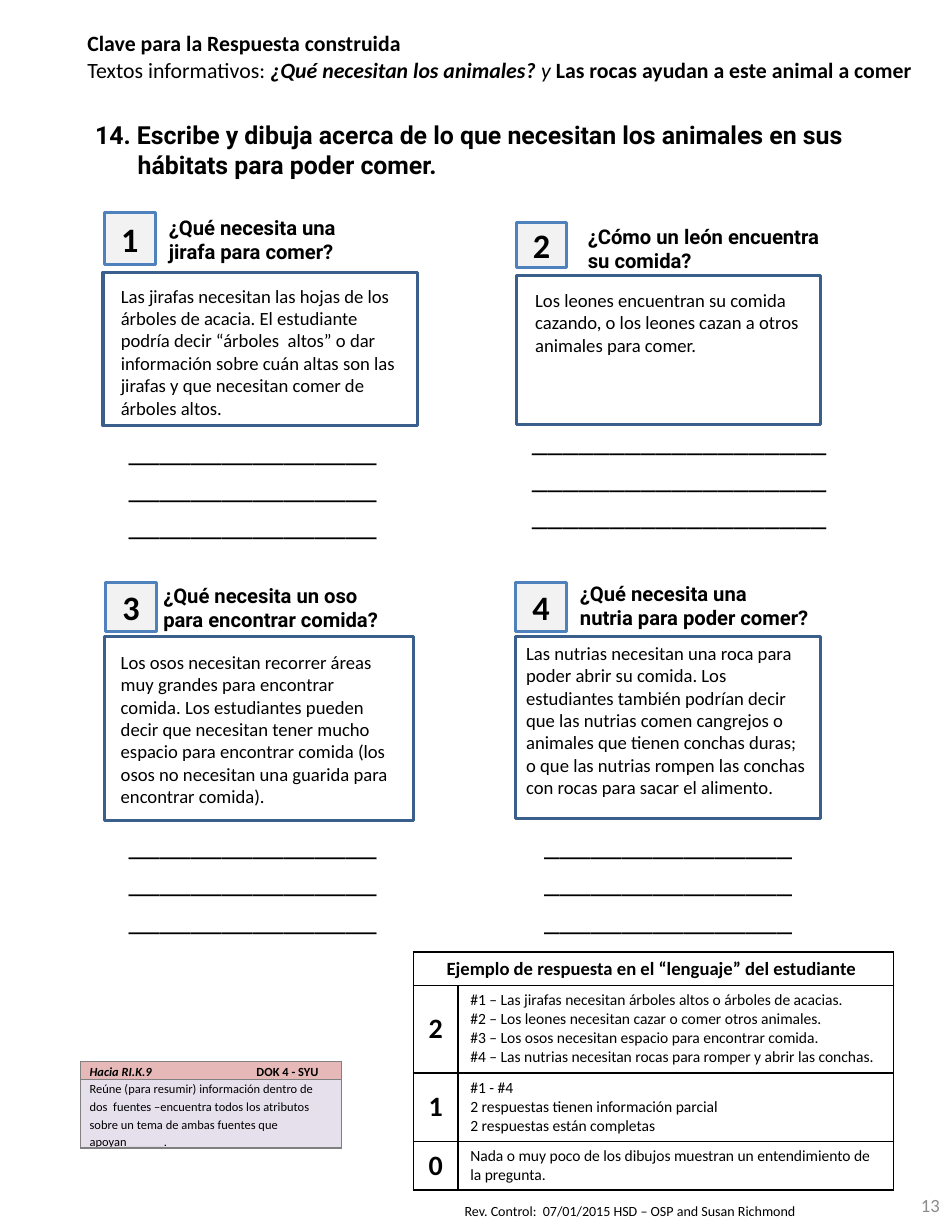
from lxml import etree
from pptx import Presentation
from pptx.dml.color import RGBColor
from pptx.enum import shapes, text
from pptx.oxml.ns import qn
from pptx.util import Inches, Pt

BLACK = RGBColor(0x00, 0x00, 0x00)
WHITE = RGBColor(0xFF, 0xFF, 0xFF)
GRAY = RGBColor(0x80, 0x80, 0x80)
PAGE_GRAY = RGBColor(0x8C, 0x8C, 0x8C)
BADGE_FILL = RGBColor(0xF2, 0xF2, 0xF2)
BADGE_LINE = RGBColor(0x4F, 0x81, 0xBD)
FRAME_LINE = RGBColor(0x3A, 0x5F, 0x8C)
PINK = RGBColor(0xE6, 0xB9, 0xB8)
LILAC = RGBColor(0xE6, 0xE0, 0xEC)

WIDE_MARGINS = (0.11, 0.05, 0.11, 0.05)
MIDDLE = text.MSO_ANCHOR.MIDDLE
CENTER = text.PP_ALIGN.CENTER

# Each card: origin, then parts as (left, top, width, height) from that origin.
CARDS = [
    dict(origin=(0.93, 1.9), number="1", badge=(0, 0, 0.46, 0.46),
         frame=(-0.01, 0.53, 2.81, 1.37),
         heading=(0.48, -0.03, 1.94, 0.54), question=["¿Qué necesita una jirafa para comer?"],
         answer=(0.05, 0.59, 2.75, 1.31),
         sample="Las jirafas necesitan las hojas de los árboles de acacia. El estudiante podría "
                "decir “árboles  altos” o dar información sobre cuán altas son las jirafas y que "
                "necesitan comer de árboles altos.",
         blanks=(0.12, 1.89, 2.5, 1.11), blank_count=48),
    dict(origin=(4.61, 1.99), number="2", badge=(0, 0, 0.45, 0.4),
         frame=(0, 0.47, 2.72, 1.33),
         heading=(0.54, -0.04, 2.41, 0.54), question=["¿Cómo un león encuentra su comida?"],
         answer=(0.07, 0.54, 2.65, 0.71),
         sample="Los leones encuentran su comida cazando, o los leones cazan a otros animales "
                "para comer.",
         blanks=(0.04, 1.71, 2.89, 1.11), blank_count=57),
    dict(origin=(0.93, 5.2), number="3", badge=(0.01, 0, 0.46, 0.44),
         frame=(0, 0.48, 2.76, 1.65),
         heading=(0.43, -0.04, 2.33, 0.54),
         question=["¿Qué necesita un oso para encontrar comida?"],
         answer=(0.05, 0.56, 2.6, 1.51),
         sample="Los osos necesitan recorrer áreas muy grandes para encontrar comida. Los "
                "estudiantes pueden decir que necesitan tener mucho espacio para encontrar "
                "comida (los osos no necesitan una guarida para encontrar comida).",
         blanks=(0.12, 2.11, 2.5, 1.11), blank_count=48),
    dict(origin=(4.6, 5.2), number="4", badge=(0, 0, 0.46, 0.44),
         frame=(0, 0.48, 2.73, 1.63),
         heading=(0.48, -0.06, 2.58, 0.54),
         question=["¿Qué necesita una", "nutria para poder comer?"],
         answer=None,
         sample="Las nutrias necesitan una roca para poder abrir su comida. Los estudiantes "
                "también podrían decir que las nutrias comen cangrejos o animales que tienen "
                "conchas duras; o que las nutrias rompen las conchas con rocas para sacar el "
                "alimento.",
         blanks=(0.16, 2.11, 2.5, 1.11), blank_count=48),
]

RUBRIC = [
    ("2", ["#1 – Las jirafas necesitan árboles altos o árboles de acacias.",
           "#2 – Los leones necesitan cazar o comer otros animales.",
           "#3 – Los osos necesitan espacio para encontrar comida.",
           "#4 – Las nutrias necesitan rocas para romper y abrir las conchas."]),
    ("1", ["#1 - #4", "2 respuestas tienen información parcial",
           "2 respuestas están completas"]),
    ("0", ["Nada o muy poco de los dibujos muestran un entendimiento de la pregunta."]),
]


def set_margins(target, margins):
    for side, value in zip(("left", "top", "right", "bottom"), margins):
        setattr(target, f"margin_{side}", Inches(value))


def write(frame, lines, size, color=BLACK, font="Calibri", align=None, spacing=None, **style):
    """Fill a text frame; a line is a string or a list of (string, font values) runs."""
    for index, line in enumerate(lines):
        paragraph = frame.paragraphs[0] if index == 0 else frame.add_paragraph()
        paragraph.alignment = align
        paragraph.line_spacing = spacing
        for words, extra in [(line, {})] if isinstance(line, str) else line:
            run = paragraph.add_run()
            run.text = words
            run.font.color.rgb = color
            values = {"name": font, "size": Pt(size), **style, **extra}
            for name, value in values.items():
                setattr(run.font, name, value)


def add_text(slide, box, lines, size, margins=(0.1, 0.05, 0.1, 0.05), wrap=True,
             anchor=text.MSO_ANCHOR.TOP, **style):
    frame = slide.shapes.add_textbox(*map(Inches, box)).text_frame
    frame.word_wrap = wrap
    frame.vertical_anchor = anchor
    set_margins(frame, margins)
    write(frame, lines, size, **style)
    return frame


def add_box(slide, box, fill, line):
    shape = slide.shapes.add_shape(shapes.MSO_SHAPE.RECTANGLE, *map(Inches, box))
    shape.shadow.inherit = False
    shape.fill.solid()
    shape.fill.fore_color.rgb = fill
    shape.line.color.rgb = line
    shape.line.width = Pt(2)
    return shape.text_frame


def add_card(slide, card):
    left, top = card["origin"]

    def place(part):
        x, y, width, height = card[part]
        return left + x, top + y, width, height

    badge = add_box(slide, place("badge"), BADGE_FILL, BADGE_LINE)
    badge.vertical_anchor = MIDDLE
    set_margins(badge, WIDE_MARGINS)
    write(badge, [card["number"]], 22, align=CENTER, bold=True)
    frame = add_box(slide, place("frame"), WHITE, FRAME_LINE)
    if card["answer"]:
        add_text(slide, place("answer"), [card["sample"]], 12)
    else:
        frame.vertical_anchor = text.MSO_ANCHOR.TOP
        write(frame, [card["sample"]], 12, align=text.PP_ALIGN.LEFT)
    add_text(slide, place("heading"), card["question"], 13, font="Roboto", bold=True)
    add_text(slide, place("blanks"), ["_" * card["blank_count"]], 20)


def add_grid(slide, box, widths, heights, border):
    """Add an unstyled table whose cells all have a thin border."""
    table = slide.shapes.add_table(len(heights), len(widths), *map(Inches, box)).table
    table.first_row = table.horz_banding = False
    for column, width in zip(table.columns, widths):
        column.width = Inches(width)
    for row, height in zip(table.rows, heights):
        row.height = Inches(height)
    for cell in table.iter_cells():
        cell.fill.background()
        properties = cell._tc.get_or_add_tcPr()
        for index, side in enumerate(("a:lnL", "a:lnR", "a:lnT", "a:lnB")):
            line = etree.Element(qn(side), w=str(Pt(1)))
            fill = etree.SubElement(line, qn("a:solidFill"))
            etree.SubElement(fill, qn("a:srgbClr"), val=str(border))
            properties.insert(index, line)
    return table


def add_standard(slide, left, top):
    heights = (0.16, 0.61)
    table = add_grid(slide, (left, top, 2.33, sum(heights)), [2.33], heights, GRAY)
    title, detail = table.cell(0, 0), table.cell(1, 0)
    for cell, color in ((title, PINK), (detail, LILAC)):
        set_margins(cell, (0.08, 0, 0.08, 0))
        cell.fill.solid()
        cell.fill.fore_color.rgb = color
    title.vertical_anchor = MIDDLE
    write(title.text_frame, [[("Hacia RI.K.9\t", {"italic": True}), ("DOK 4 - SYU", {})]], 8,
          spacing=1.15, bold=True)
    properties = title.text_frame.paragraphs[0]._p.get_or_add_pPr()
    tabs = etree.SubElement(properties, qn("a:tabLst"))
    etree.SubElement(tabs, qn("a:tab"), pos=str(Inches(1.49)), algn="l")
    write(detail.text_frame, ["Reúne (para resumir) información dentro de dos  fuentes –encuentra "
                              "todos los atributos sobre un tema de ambas fuentes que "
                              "apoyan______."], 8, spacing=1.15, italic=True and False)


def add_rubric(slide, left, top):
    heights = (0.3, 0.78, 0.61, 0.43)
    table = add_grid(slide, (left, top, 4.29, sum(heights)), [0.4, 3.89], heights, BLACK)
    for cell in table.iter_cells():
        set_margins(cell, WIDE_MARGINS)
    title = table.cell(0, 0)
    title.merge(table.cell(0, 1))
    write(title.text_frame, ["Ejemplo de respuesta en el “lenguaje” del estudiante "], 12,
          align=CENTER, bold=True)
    for row, (score, lines) in enumerate(RUBRIC, start=1):
        table.cell(row, 0).vertical_anchor = MIDDLE
        write(table.cell(row, 0).text_frame, [score], 18, align=CENTER, bold=True)
        write(table.cell(row, 1).text_frame, lines, 10)


def add_header(slide, left, top):
    bold, italic = {"bold": True}, {"italic": True}
    add_text(slide, (left, top, 7.61, 0.83), [
        [("Clave para la Respuesta construida", bold)],
        [("Textos informativos: ", {}), ("¿Qué necesitan los animales? ", {**bold, **italic}),
         ("y ", italic), ("Las rocas ayudan a este animal a comer", bold)],
    ], 14, margins=WIDE_MARGINS)
    task = add_text(slide, (left + 0.07, top + 0.8, 7.54, 0.64),
                    ["14. Escribe y dibuja acerca de lo que necesitan los animales en sus "
                     "hábitats para poder comer."], 16, margins=WIDE_MARGINS,
                    font="Roboto", bold=True)
    properties = task.paragraphs[0]._p.get_or_add_pPr()
    properties.set("marL", str(Inches(0.38)))
    properties.set("indent", str(Inches(-0.38)))


def add_footer(slide, left, top):
    add_text(slide, (left, top + 0.14, 3.19, 0.25),
             ["Rev. Control:  07/01/2015 HSD – OSP and Susan Richmond"], 9, wrap=False)
    add_text(slide, (left + 3.53, top, 0.92, 0.42), ["13"], 12, margins=(0.11, 0.06, 0.11, 0.06),
             anchor=MIDDLE, color=PAGE_GRAY, align=text.PP_ALIGN.RIGHT)


def main():
    presentation = Presentation()
    presentation.slide_width, presentation.slide_height = Inches(8.5), Inches(11)
    slide = presentation.slides.add_slide(presentation.slide_layouts[6])
    add_header(slide, 0.67, 0.22)
    for card in CARDS:
        add_card(slide, card)
    add_standard(slide, 0.72, 9.48)
    add_rubric(slide, 3.69, 8.5)
    add_footer(slide, 4.05, 10.55)
    presentation.save("out.pptx")


if __name__ == "__main__":
    main()
